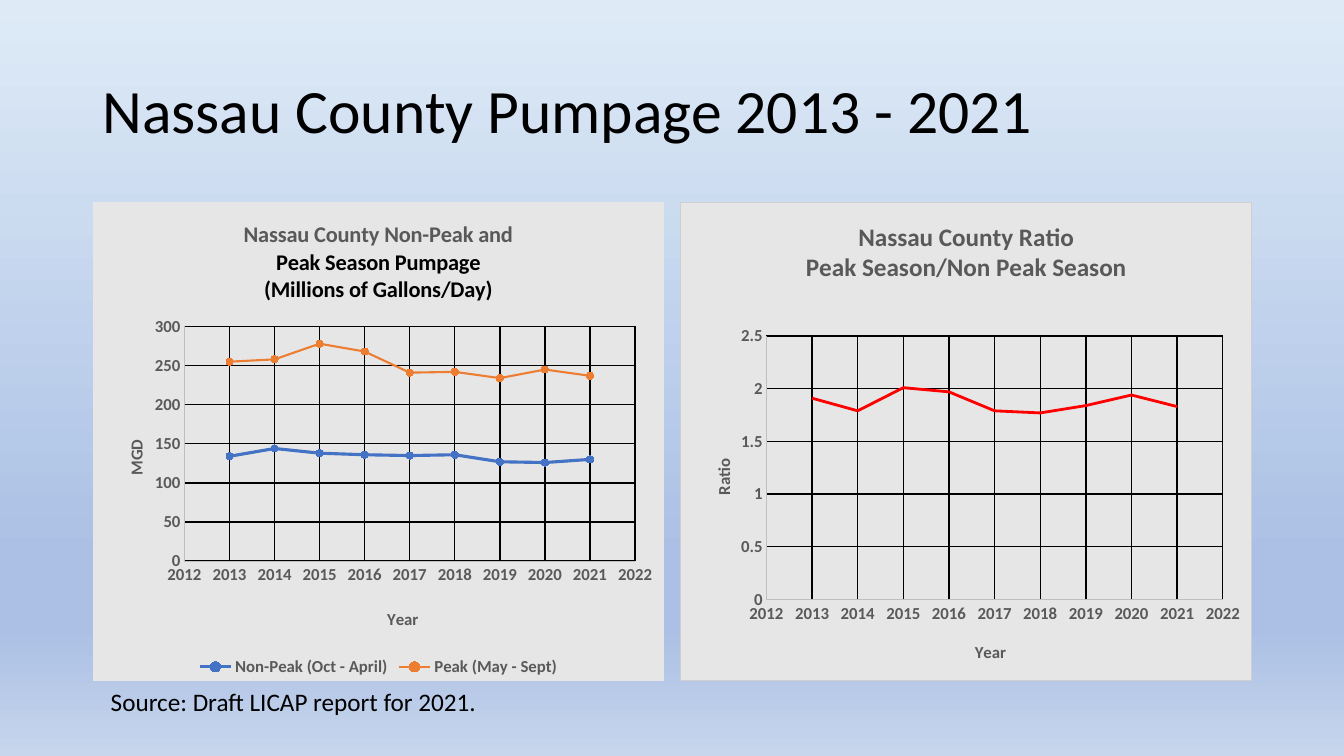
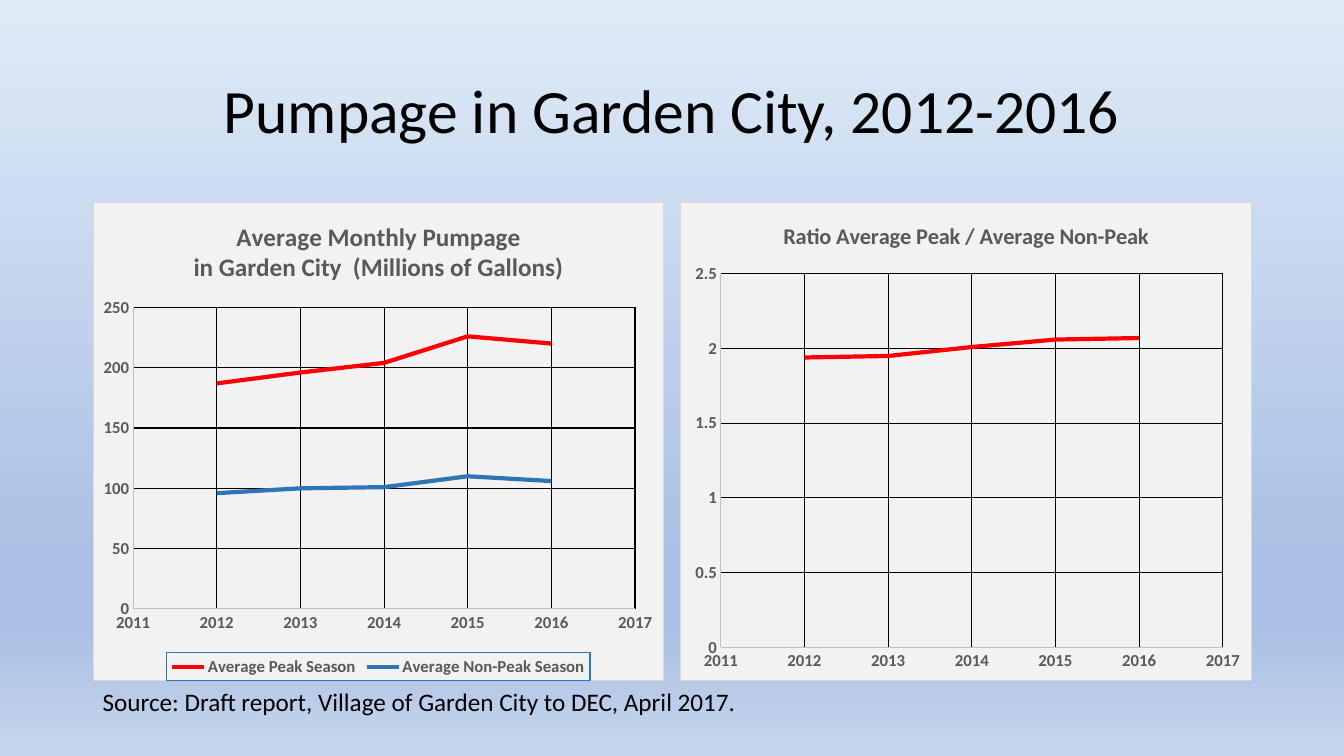
from pptx import Presentation
from pptx.chart.data import XyChartData
from pptx.dml.color import RGBColor
from pptx.enum.chart import XL_CHART_TYPE as Kind
from pptx.enum.chart import XL_LEGEND_POSITION as Side
from pptx.enum.chart import XL_MARKER_STYLE as Mark
from pptx.enum.chart import XL_TICK_MARK as Tick
from pptx.enum.text import MSO_ANCHOR as Anchor
from pptx.enum.text import PP_ALIGN as Align
from pptx.oxml import parse_xml
from pptx.oxml.ns import nsdecls, qn
from pptx.util import Pt

FONT = "Calibri"
BLACK = RGBColor(0x00, 0x00, 0x00)
TEXT = RGBColor(0x59, 0x59, 0x59)
AXIS = RGBColor(0xBF, 0xBF, 0xBF)
RED = RGBColor(0xFF, 0x00, 0x00)
BLUE = RGBColor(0x44, 0x72, 0xC4)
ORANGE = RGBColor(0xED, 0x7D, 0x31)
STEEL = RGBColor(0x2E, 0x75, 0xB6)
GRAY = RGBColor(0xE7, 0xE6, 0xE6)
EDGE = RGBColor(0xD0, 0xCE, 0xCE)
PALE = RGBColor(0xF2, 0xF2, 0xF2)
RIM = RGBColor(0xD9, 0xD9, 0xD9)
SKY = [(0, RGBColor(0xDE, 0xEB, 0xF7)), (74, RGBColor(0xAB, 0xC0, 0xE4)),
       (83, RGBColor(0xAB, 0xC0, 0xE4)), (100, RGBColor(0xC7, 0xD5, 0xED))]

LEFT, RIGHT, TOP = 66.2, 486, 144
WIDE, HIGH = 408.2, 342.7


def style(font, size, color, bold=False):
    font.name, font.size, font.bold = FONT, Pt(size), bold
    font.color.rgb = color


def add_run(para, text, size, color, bold=False):
    run = para.add_run()
    run.text = text
    style(run.font, size, color, bold)


def paint_sky(master):
    """Give every slide the same gradient."""
    fill = master.background.fill
    fill.gradient()
    fill.gradient_angle = 270
    stops = "".join(f'<a:gs pos="{pos * 1000}"><a:srgbClr val="{color}"/></a:gs>'
                    for pos, color in SKY)
    old = next(master.element.iter(qn("a:gsLst")))
    new = parse_xml(f'<a:gsLst {nsdecls("a")}>{stops}</a:gsLst>')
    old.getparent().replace(old, new)


def add_text(slide, text, box, size, align=Align.LEFT, anchor=Anchor.TOP, space=1.0):
    frame = slide.shapes.add_textbox(*map(Pt, box)).text_frame
    frame.word_wrap = True
    frame.vertical_anchor = anchor
    para = frame.paragraphs[0]
    para.alignment, para.line_spacing = align, space
    add_run(para, text, size, BLACK)


def add_slide(deck, title, source, align, inset):
    slide = deck.slides.add_slide(deck.slide_layouts[6])
    add_text(slide, title, (LEFT, 28.8, 828, 104.4), 44, align, Anchor.MIDDLE, 0.9)
    add_text(slide, source, (LEFT + inset, 486.7, 522, 29), 18)
    return slide


# Chart parts

def place(node, index, left, top, size=None):
    """Set a part's place as shares of the chart."""
    for old in node.findall(qn("c:layout")):
        node.remove(old)
    parts = [("xMode", "edge"), ("yMode", "edge"), ("x", left), ("y", top)]
    if size:
        parts = [("layoutTarget", "inner")] + parts + [("w", size[0]), ("h", size[1])]
    inner = "".join(f'<c:{tag} val="{val}"/>' for tag, val in parts)
    node.insert(index, parse_xml(
        f'<c:layout {nsdecls("c")}><c:manualLayout>{inner}</c:manualLayout></c:layout>'))


def make_frame(line, fill=None):
    """Build the fill and border of a chart part."""
    solid = '<a:solidFill><a:srgbClr val="{}"/></a:solidFill>'
    body = solid.format(fill) if fill else "<a:noFill/>"
    return parse_xml(f'<c:spPr {nsdecls("c", "a")}>{body}'
                     f'<a:ln w="{Pt(0.75)}">{solid.format(line)}</a:ln></c:spPr>')


def set_axis(axis, low, high, step, grid):
    axis.minimum_scale, axis.maximum_scale, axis.major_unit = low, high, step
    axis.major_tick_mark = axis.minor_tick_mark = Tick.NONE
    style(axis.tick_labels.font, 12, TEXT, True)
    axis.format.line.color.rgb = AXIS
    axis.format.line.width = Pt(0.75)
    axis.has_major_gridlines = True
    line = axis.major_gridlines.format.line
    line.color.rgb, line.width = BLACK, Pt(grid)


def name_axis(axis, text, spot, turn=0):
    axis.has_title = True
    title = axis.axis_title
    frame = title.text_frame
    add_run(frame.paragraphs[0], text, 12, TEXT, True)
    frame._txBody.bodyPr.set("rot", str(turn * 60000))
    place(title._element, 1, *spot)


def set_title(chart, lines, size):
    chart.has_title = True
    frame = chart.chart_title.text_frame
    for num, (text, color) in enumerate(lines):
        para = frame.add_paragraph() if num else frame.paragraphs[0]
        add_run(para, text, size, color, True)
    chart.chart_title.include_in_layout = False


def set_key(chart, border):
    chart.has_legend = True
    key = chart.legend
    key.position, key.include_in_layout = Side.BOTTOM, False
    style(key.font, 12, TEXT, True)
    if border:
        key._element.find(qn("c:txPr")).addprevious(make_frame(border))


def add_graph(slide, left, title, size, rows, start, span, scale, plot, fill, edge,
              grid=0.75, dots=False, key=False, border=None, names=()):
    """Draw yearly lines; rows hold name, color, width and values."""
    data = XyChartData()
    for name, _, _, vals in rows:
        line = data.add_series(name)
        for year, val in enumerate(vals, start):
            line.add_data_point(year, val)
    kind = Kind.XY_SCATTER_LINES if dots else Kind.XY_SCATTER_LINES_NO_MARKERS
    box = map(Pt, (left, TOP, WIDE, HIGH))
    chart = slide.shapes.add_chart(kind, *box, data).chart
    style(chart.font, 10, BLACK)
    chart.plots[0].vary_by_categories = False
    set_title(chart, title, size)
    set_axis(chart.category_axis, *span, 1, grid)
    set_axis(chart.value_axis, 0, *scale, grid)
    for axis, name in zip((chart.category_axis, chart.value_axis), names):
        name_axis(axis, *name)
    for item, (_, color, width, _) in zip(chart.plots[0].series, rows):
        item.format.line.color.rgb = color
        item.format.line.width = Pt(width)
        if dots:
            item.marker.style, item.marker.size = Mark.CIRCLE, 5
            item.marker.format.fill.solid()
            item.marker.format.fill.fore_color.rgb = color
            item.marker.format.line.color.rgb = color
    chart.has_legend = False
    if key:
        set_key(chart, border)
    root = chart._chartSpace.find(qn("c:chart"))
    root.addnext(make_frame(edge, fill))
    place(root.find(qn("c:plotArea")), 0, *plot)


# Slides

def add_county(deck):
    slide = add_slide(deck, "Nassau County Pumpage 2013 - 2021",
                      "Source: Draft LICAP report for 2021.", Align.LEFT, 5.8)
    base = dict(start=2013, span=(2012, 2022), fill=GRAY, grid=1)
    add_graph(slide, LEFT,
              [("Nassau County Non-Peak and", TEXT), ("Peak Season Pumpage", BLACK),
               ("(Millions of Gallons/Day)", BLACK)], 16,
              [("Non-Peak (Oct - April)", BLUE, 2.25,
                [134, 144, 138, 136, 135, 136, 127, 126, 130]),
               ("Peak (May - Sept)", ORANGE, 1.5,
                [255, 258, 278, 268, 241, 242, 234, 245, 237])],
              scale=(300, 50), plot=(0.16, 0.26, (0.79, 0.49)), edge=GRAY,
              dots=True, key=True,
              names=[("Year", (0.51, 0.84)), ("MGD", (0.05, 0.49), -90)], **base)
    add_graph(slide, RIGHT,
              [("Nassau County Ratio", TEXT), ("Peak Season/Non Peak Season", TEXT)], 18,
              [("Ratio", RED, 2,
                [1.91, 1.79, 2.01, 1.97, 1.79, 1.77, 1.84, 1.94, 1.83])],
              scale=(2.5, 0.5), plot=(0.15, 0.28, (0.8, 0.55)), edge=EDGE,
              names=[("Year", (0.51, 0.91)), ("Ratio", (0.05, 0.53), -90)], **base)


def add_city(deck):
    slide = add_slide(deck, "Pumpage in Garden City, 2012-2016",
                      "Source: Draft report, Village of Garden City to DEC, April 2017.",
                      Align.CENTER, 0)
    base = dict(start=2012, span=(2011, 2017), fill=PALE, edge=RIM)
    add_graph(slide, LEFT,
              [("Average Monthly Pumpage", TEXT),
               ("in Garden City  (Millions of Gallons)", TEXT)], 18,
              [("Average Peak Season", RED, 3, [187, 196, 204, 226, 220]),
               ("Average Non-Peak Season", STEEL, 3, [96, 100, 101, 110, 106])],
              scale=(250, 50), plot=(0.07, 0.22, (0.88, 0.63)),
              key=True, border=STEEL, **base)
    add_graph(slide, RIGHT, [("Ratio Average Peak / Average Non-Peak", TEXT)], 16,
              [("Ratio", RED, 3, [1.94, 1.95, 2.01, 2.06, 2.07])],
              scale=(2.5, 0.5), plot=(0.07, 0.15, (0.88, 0.78)), **base)


def main():
    deck = Presentation()
    deck.slide_width, deck.slide_height = Pt(960), Pt(540)
    paint_sky(deck.slide_master)
    add_county(deck)
    add_city(deck)
    deck.save("out.pptx")


if __name__ == "__main__":
    main()
